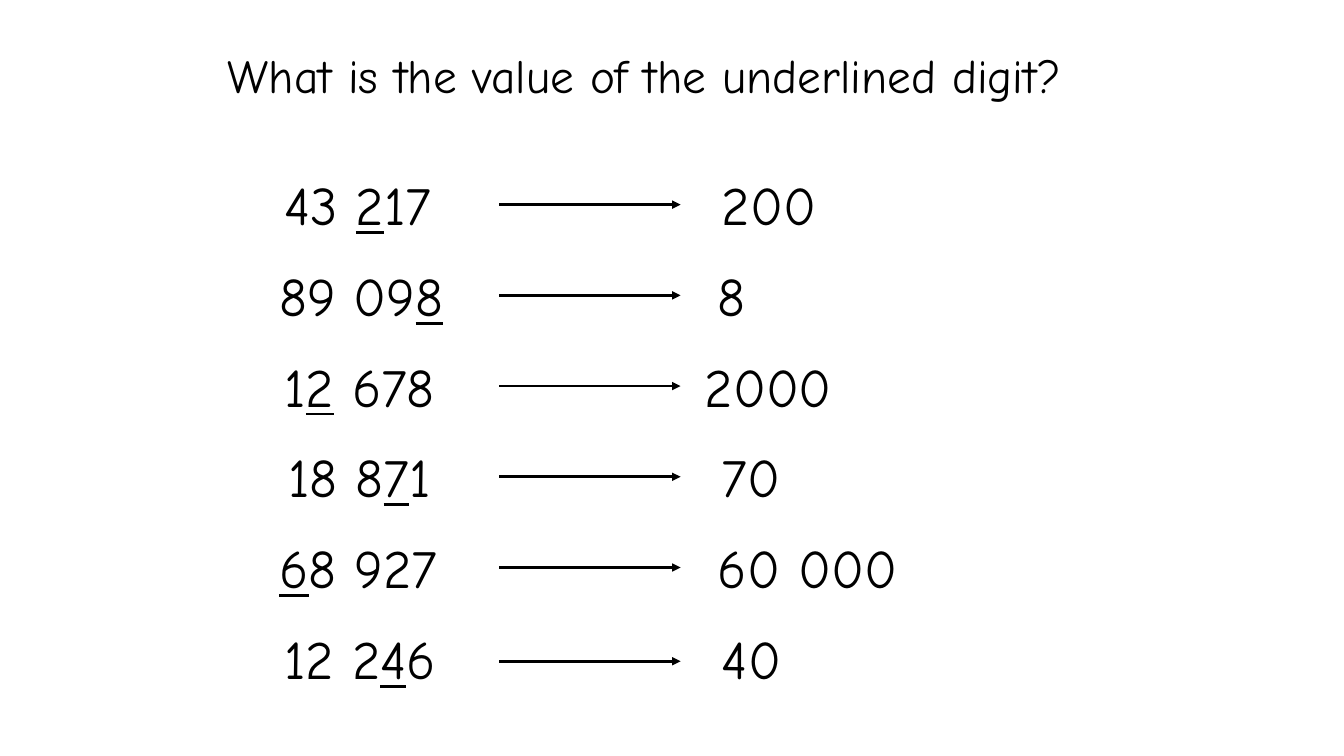
from lxml import etree
from pptx import Presentation
from pptx.dml.color import RGBColor
from pptx.enum import shapes, text
from pptx.oxml import ns
from pptx.util import Inches, Pt

# Content
QUESTION = "What is the value of the underlined digit?"
# number split as (before, underlined digit, after), its left and width,
# value, its left and width, drop of the arrow below the row top
ROWS = [
    (("43 ", "2", "17"), 2.78, 1.81, "200", 7.12, 1.07, 0.37),
    (("89 09", "8", ""), 2.73, 1.9, "8", 7.08, 0.41, 0.37),
    (("1", "2", " 678"), 2.78, 1.81, "2000", 6.95, 1.4, 0.37),
    (("18 8", "7", "1"), 2.82, 1.72, "70", 7.12, 0.74, 0.37),
    (("", "6", "8 927"), 2.73, 1.9, "60 000", 7.08, 1.9, 0.37),
    (("12 2", "4", "6"), 2.78, 1.81, "40", 7.12, 0.74, 0.4),
]

# Layout and style
FONT, INK = "Comic Neue", "000000"
QUESTION_SIZE, NUMBER_SIZE = 33.8, 38.7
ROW_TOP, ROW_STEP, ROW_HEIGHT = 1.66, 0.9, 0.73
ARROW_START, ARROW_END = 4.95, 6.75
INSET = 0.04


def color(hex_code):
    return RGBColor.from_string(hex_code)


def add_text(slide, left, top, width, height, parts, size):
    """Add one line of text; parts are (wording, underlined) pairs."""
    box = slide.shapes.add_textbox(
        Inches(left), Inches(top), Inches(width), Inches(height))
    frame = box.text_frame
    frame.word_wrap = False
    frame.auto_size = text.MSO_AUTO_SIZE.SHAPE_TO_FIT_TEXT
    frame.vertical_anchor = text.MSO_ANCHOR.MIDDLE
    frame.margin_left = frame.margin_right = Inches(INSET)
    frame.margin_top = frame.margin_bottom = Inches(INSET)
    line = frame.paragraphs[0]
    line.alignment = text.PP_ALIGN.LEFT
    for wording, underlined in parts:
        if wording:
            run = line.add_run()
            run.text = wording
            run.font.name = FONT
            run.font.size = Pt(size)
            run.font.underline = underlined
            run.font.color.rgb = color(INK)


def add_arrow(slide, y):
    arrow = slide.shapes.add_connector(
        shapes.MSO_CONNECTOR.STRAIGHT,
        Inches(ARROW_START), Inches(y), Inches(ARROW_END), Inches(y))
    arrow.line.color.rgb = color(INK)
    arrow.line.width = Pt(2)
    # Arrowhead and no shadow
    etree.SubElement(arrow.line._get_or_add_ln(), ns.qn("a:tailEnd"), type="triangle")
    etree.SubElement(arrow._element.spPr, ns.qn("a:effectLst"))


def main():
    deck = Presentation()
    deck.slide_width, deck.slide_height = Inches(13.33), Inches(7.5)
    slide = deck.slides.add_slide(deck.slide_layouts[6])

    # Question
    add_text(slide, 2.22, 0.41, 9.35, 0.65, [(QUESTION, False)], QUESTION_SIZE)

    # Number, arrow and value in each row
    for index, row in enumerate(ROWS):
        number, number_left, number_width, value, value_left, value_width, drop = row
        top = ROW_TOP + index * ROW_STEP
        add_text(slide, number_left, top, number_width, ROW_HEIGHT,
                 zip(number, (False, True, False)), NUMBER_SIZE)
        add_arrow(slide, top + drop)
        add_text(slide, value_left, top, value_width, ROW_HEIGHT,
                 [(value, False)], NUMBER_SIZE)

    deck.save("out.pptx")


if __name__ == "__main__":
    main()
